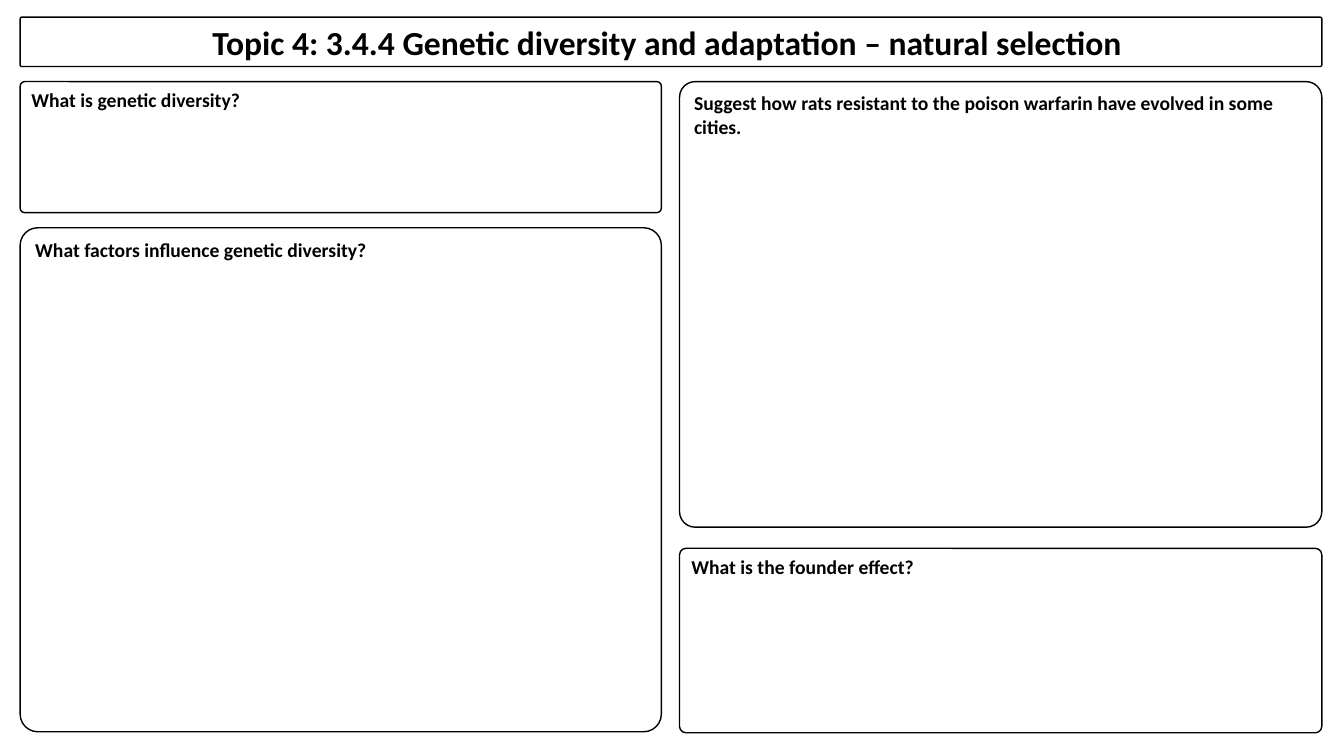
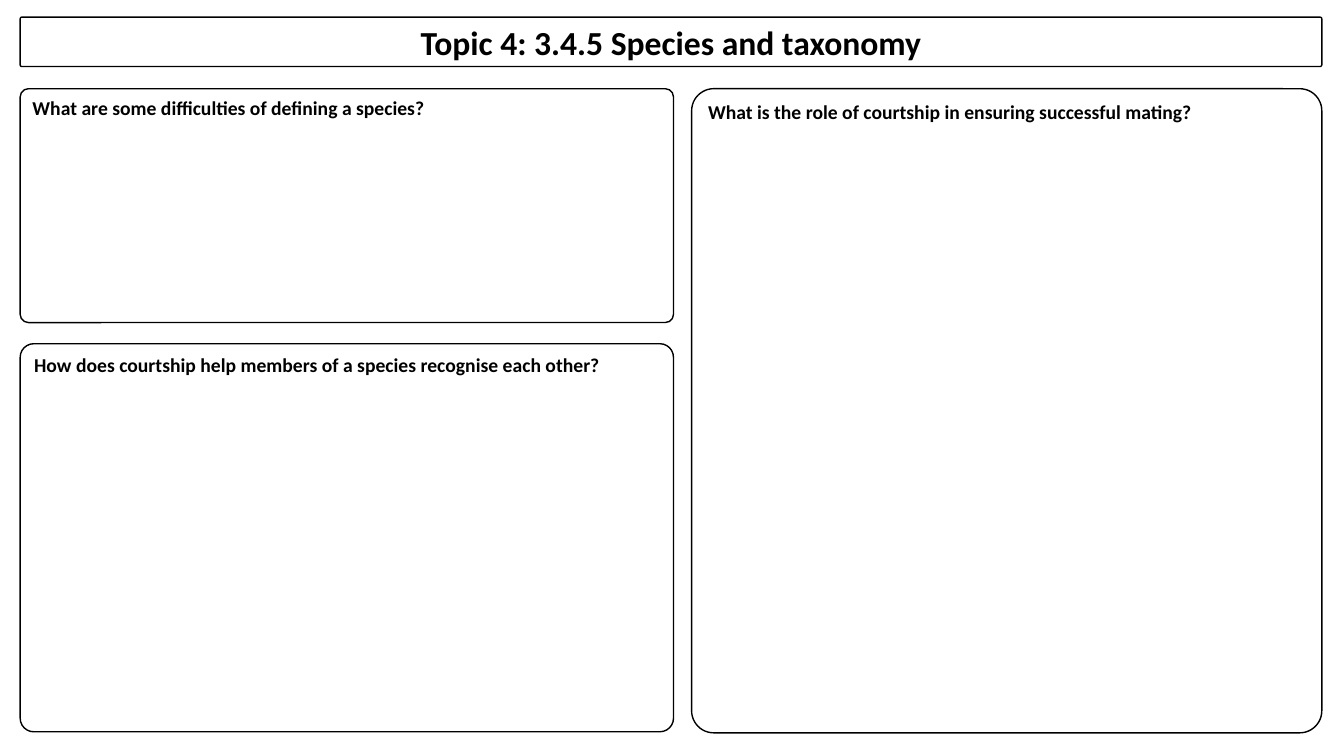
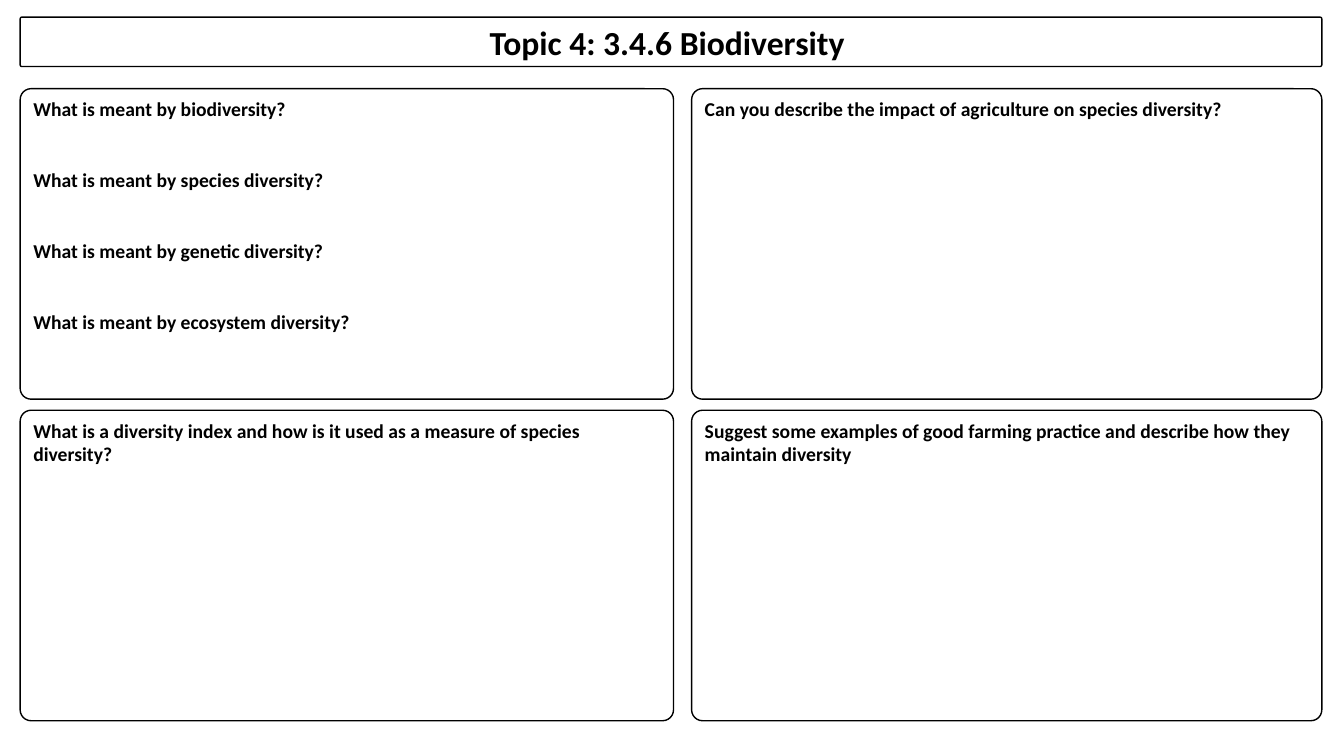
from dataclasses import dataclass

from pptx import Presentation
from pptx.dml.color import RGBColor
from pptx.enum.shapes import MSO_SHAPE
from pptx.enum.text import MSO_ANCHOR, PP_ALIGN
from pptx.slide import Slide
from pptx.util import Inches, Pt

SLIDE_W, SLIDE_H = 13.33, 7.5
LEFT, RIGHT = 0.2, 13.11
COLUMN_GAP = 0.18
TITLE_TOP, TITLE_H = 0.17, 0.49
CORNER = 0.035
INK = "000000"
TITLE_FONT = {"name": "Calibri", "size": Pt(24), "bold": True}
QUESTION_FONT = {"name": "Calibri", "size": Pt(14), "bold": True}
ANSWER_SPACE = Pt(34)


@dataclass(frozen=True)
class Panel:
    height: float
    questions: tuple[str, ...]


@dataclass(frozen=True)
class Column:
    gap: float
    panels: tuple[Panel, ...]


@dataclass(frozen=True)
class Page:
    title: str
    top: float
    left_width: float
    columns: tuple[Column, Column]


PAGES = (
    Page("Topic 4: 3.4.4 Genetic diversity and adaptation – natural selection ", 0.81, 6.36, (
        Column(0.15, (
            Panel(1.3, ("What is genetic diversity?",)),
            Panel(5, ("What factors influence genetic diversity?",)),
        )),
        Column(0.21, (
            Panel(4.42, ("Suggest how rats resistant to the poison warfarin "
                         "have evolved in some cities.",)),
            Panel(1.83, ("What is the founder effect?",)),
        )),
    )),
    Page("Topic 4: 3.4.5 Species and taxonomy", 0.88, 6.48, (
        Column(0.21, (
            Panel(2.32, ("What are some difficulties of defining a species?",)),
            Panel(3.85, ("How does courtship help members of a species "
                         "recognise each other?",)),
        )),
        Column(0, (
            Panel(6.39, ("What is the role of courtship in ensuring successful mating?",)),
        )),
    )),
    Page("Topic 4: 3.4.6 Biodiversity ", 0.88, 6.48, (
        Column(0.11, (
            Panel(3.08, tuple(f"What is meant by {term}?" for term in (
                "biodiversity", "species diversity",
                "genetic diversity", "ecosystem diversity"))),
            Panel(3.08, ("What is a diversity index and how is it used "
                         "as a measure of species diversity?",)),
        )),
        Column(0.11, (
            Panel(3.08, ("Can you describe the impact of agriculture "
                         "on species diversity?",)),
            Panel(3.08, ("Suggest some examples of good farming practice "
                         "and describe how they maintain diversity",)),
        )),
    )),
)


def colour(value: str) -> RGBColor:
    return RGBColor.from_string(value)


def add_box(s: Slide, x: float, y: float, w: float, h: float, texts: tuple[str, ...],
            font: dict, align: PP_ALIGN = PP_ALIGN.LEFT,
            anchor: MSO_ANCHOR = MSO_ANCHOR.TOP) -> None:
    """Draw an outlined box, leaving answer space between its texts."""
    sp = s.shapes.add_shape(MSO_SHAPE.ROUNDED_RECTANGLE, *map(Inches, (x, y, w, h)))
    sp.adjustments[0] = CORNER
    sp.shadow.inherit = False
    sp.fill.background()
    sp.line.color.rgb = colour(INK)
    sp.line.width = Pt(1)
    tf = sp.text_frame
    tf.word_wrap = True
    tf.vertical_anchor = anchor
    for i, text in enumerate(texts):
        p = tf.add_paragraph() if i else tf.paragraphs[0]
        p.alignment = align
        if i:
            p.space_before = ANSWER_SPACE
        r = p.add_run()
        r.text = text
        for name, value in font.items():
            setattr(r.font, name, value)
        r.font.color.rgb = colour(INK)


def add_column(s: Slide, column: Column, x: float, top: float, width: float) -> None:
    y = top
    for panel in column.panels:
        add_box(s, x, y, width, panel.height, panel.questions, QUESTION_FONT)
        y += panel.height + column.gap


def add_page(s: Slide, page: Page) -> None:
    add_box(s, LEFT, TITLE_TOP, RIGHT - LEFT, TITLE_H, (page.title,), TITLE_FONT,
            PP_ALIGN.CENTER, MSO_ANCHOR.MIDDLE)
    right_x = LEFT + page.left_width + COLUMN_GAP
    spans = ((LEFT, page.left_width), (right_x, RIGHT - right_x))
    for column, (x, width) in zip(page.columns, spans):
        add_column(s, column, x, page.top, width)


def main() -> None:
    prs = Presentation()
    prs.slide_width, prs.slide_height = Inches(SLIDE_W), Inches(SLIDE_H)
    blank = prs.slide_layouts[6]
    for page in PAGES:
        add_page(prs.slides.add_slide(blank), page)
    prs.save("out.pptx")


if __name__ == "__main__":
    main()
